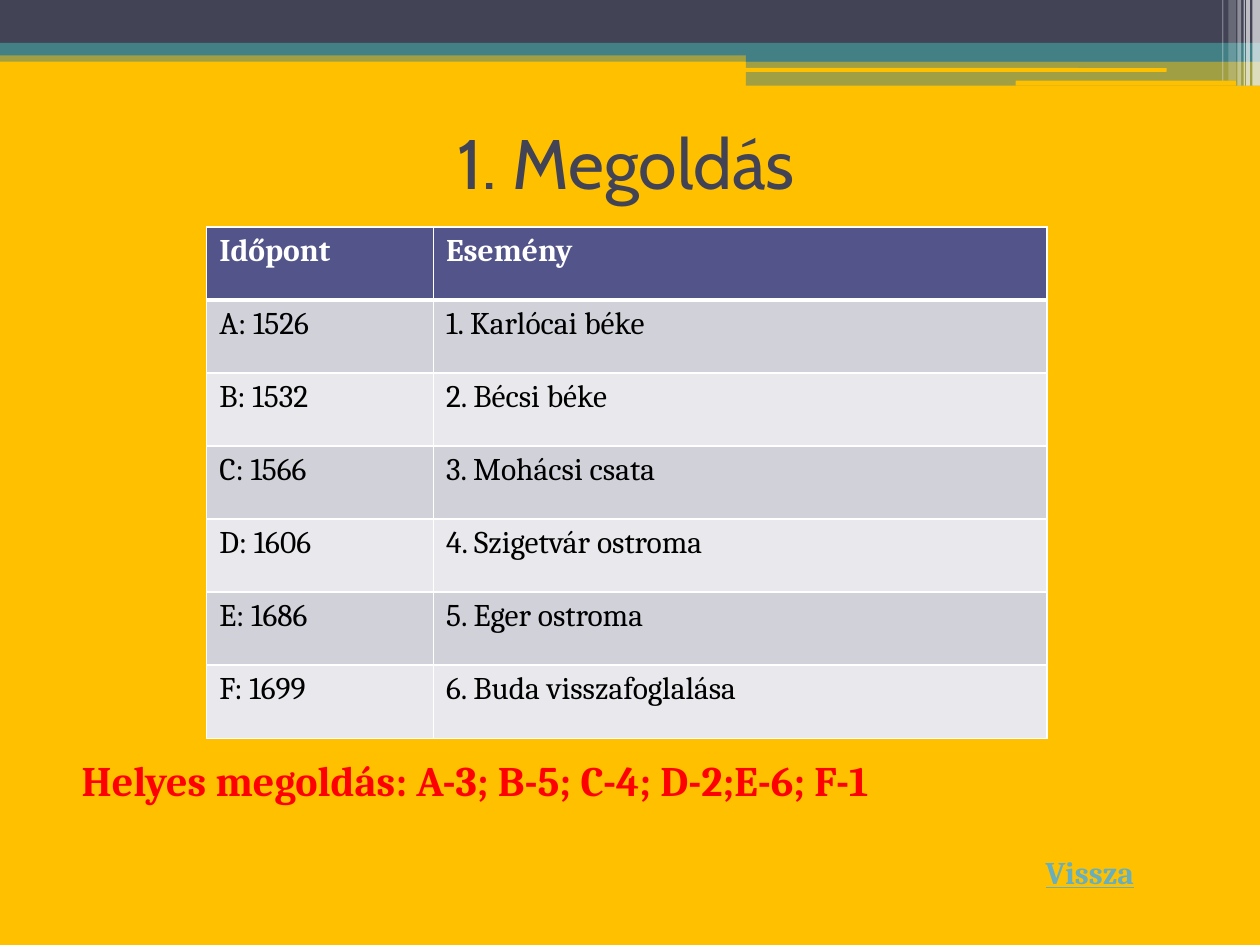
from lxml import etree
from pptx import Presentation
from pptx.dml.color import RGBColor
from pptx.enum.shapes import MSO_SHAPE
from pptx.enum.text import MSO_ANCHOR, PP_ALIGN
from pptx.oxml.ns import qn
from pptx.util import Emu, Inches, Pt

RECT, ROUND = MSO_SHAPE.RECTANGLE, MSO_SHAPE.ROUNDED_RECTANGLE
MIDDLE, TOP = MSO_ANCHOR.MIDDLE, MSO_ANCHOR.TOP
CENTER, LEFT = PP_ALIGN.CENTER, PP_ALIGN.LEFT

COLS, ROWS = 100, 75
UNIT = Inches(10) // COLS

GOLD, SLATE, TEAL, WHITE = "FFC000", "424456", "438086", "FFFFFF"
HEADER, BANDS = "53548A", ("D1D1DA", "E9E9ED")

TITLE = {"name": "Cabin", "size": Pt(40), "color": SLATE}
HEAD = {"name": "Cambria", "size": Pt(18), "bold": True, "color": WHITE}
BODY = {**HEAD, "bold": False, "color": "000000"}
ANSWER = {**HEAD, "size": Pt(24), "color": "FF0000"}
BACK = {**HEAD, "underline": True, "color": "67AFBD"}

BARS = [
    (0, 4, 100, 0.9, TEAL, 50),
    (0, 0, 100, 3.4, SLATE, 100),
    (0, 3.4, 100, 1, TEAL, 100),
    (59.2, 3.9, 40.8, 1, TEAL, 100),
    (59.2, 4.8, 40.8, 2, TEAL, 50),
]
SLOTS = [(59.1, 5.4, 33.5, 0.3), (80.6, 6.4, 17.5, 0.4)]
STRIPES = [
    (99.4, 0.6, 6.8, 65),
    (98.9, 0.3, 6.8, 65),
    (98.7, 0.1, 6.8, 60),
    (98.2, 0.3, 6.8, 40),
    (97.5, 0.6, 6.4, 20),
    (97, 0.1, 6.4, 30),
]
EVENTS = [
    ("Időpont", "Esemény"),
    ("A: 1526", "1. Karlócai béke"),
    ("B: 1532", "2. Bécsi béke"),
    ("C: 1566", "3. Mohácsi csata"),
    ("D: 1606", "4. Szigetvár ostroma"),
    ("E: 1686", "5. Eger ostroma"),
    ("F: 1699", "6. Buda visszafoglalása"),
]


def rgb(color):
    return RGBColor.from_string(color)


def grid(*units):
    return [Emu(round(u * UNIT)) for u in units]


def write(tf, text, fmt, align=LEFT):
    p = tf.paragraphs[0]
    p.alignment = align
    r = p.add_run()
    r.text = text
    for key, value in fmt.items():
        if key == "color":
            r.font.color.rgb = rgb(value)
        else:
            setattr(r.font, key, value)


def add_bar(slide, box, color, opacity=100, kind=RECT):
    sp = slide.shapes.add_shape(kind, *grid(*box))
    sp.shadow.inherit = False
    sp.line.fill.background()
    sp.fill.solid()
    sp.fill.fore_color.rgb = rgb(color)
    if opacity < 100:
        clr = sp.fill._xPr.find(".//" + qn("a:srgbClr"))
        etree.SubElement(clr, qn("a:alpha")).set("val", str(opacity * 1000))
    return sp


def add_banner(slide, box):
    left, top = box[:2]
    for x, y, w, h, color, opacity in BARS:
        add_bar(slide, (left + x, top + y, w, h), color, opacity)
    for x, y, w, h in SLOTS:
        add_bar(slide, (left + x, top + y, w, h), GOLD, kind=ROUND)
    for x, w, h, opacity in STRIPES:
        add_bar(slide, (left + x, top, w, h), WHITE, opacity)


def add_text(slide, box, text, fmt, align=LEFT, anchor=TOP):
    tf = slide.shapes.add_textbox(*grid(*box)).text_frame
    tf.word_wrap = True
    tf.vertical_anchor = anchor
    write(tf, text, fmt, align)


def add_back_button(slide, box):
    tf = add_bar(slide, box, GOLD).text_frame
    tf.word_wrap = False
    tf.vertical_anchor = TOP
    write(tf, "Vissza", BACK)


def set_borders(cell, bottom):
    tcPr = cell._tc.get_or_add_tcPr()
    widths = {"lnL": 1, "lnR": 1, "lnT": 1, "lnB": bottom}
    for i, (side, width) in enumerate(widths.items()):
        ln = etree.Element(qn("a:" + side), w=str(Pt(width)))
        fill = etree.SubElement(ln, qn("a:solidFill"))
        etree.SubElement(fill, qn("a:srgbClr")).set("val", WHITE)
        tcPr.insert(i, ln)


def add_events(slide, box):
    tbl = slide.shapes.add_table(len(EVENTS), 2, *grid(*box)).table
    share = 0.27
    for col, part in zip(tbl.columns, (share, 1 - share)):
        col.width = grid(box[2] * part)[0]
    for i, texts in enumerate(EVENTS):
        tbl.rows[i].height = grid(box[3] / len(EVENTS))[0]
        for j, text in enumerate(texts):
            cell = tbl.cell(i, j)
            cell.fill.solid()
            cell.fill.fore_color.rgb = rgb(BANDS[(i - 1) % 2] if i else HEADER)
            set_borders(cell, 1 if i else 3)
            if i == 1:
                cell._tc.tcPr.find(qn("a:lnT")).set("w", str(Pt(3)))
            write(cell.text_frame, text, BODY if i else HEAD)


def main():
    prs = Presentation()
    prs.slide_width, prs.slide_height = grid(COLS, ROWS)
    slide = prs.slides.add_slide(prs.slide_layouts[6])
    slide.background.fill.solid()
    slide.background.fill.fore_color.rgb = rgb(GOLD)
    add_banner(slide, (0, 0, COLS, 6.8))
    add_text(slide, (4.7, 7, 90, 11.7), "1. Megoldás", TITLE, CENTER, MIDDLE)
    add_back_button(slide, (82, 67.2, 10.3, 4))
    add_events(slide, (16.4, 18, 66.7, 40.6))
    add_text(slide, (5.5, 59.4, 84.4, 5),
             "Helyes megoldás: A-3; B-5; C-4; D-2;E-6; F-1", ANSWER)
    prs.save("out.pptx")


if __name__ == "__main__":
    main()
